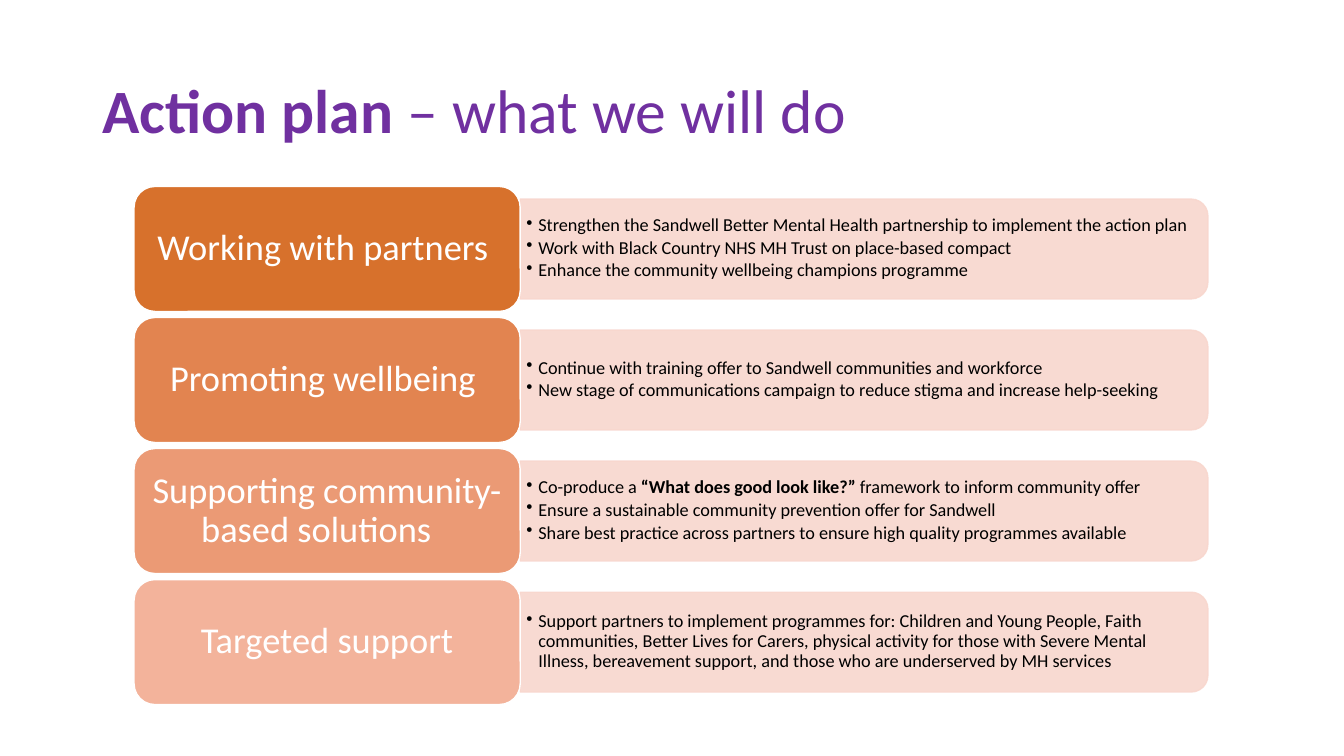
from pptx import Presentation
from pptx import util as u
from pptx.dml.color import RGBColor
from pptx.enum import shapes, text
from lxml import etree

INK = {"title": "7030A0", "strip": "F8D7CE", "edge": "FFFFFF",
       "label": "FFFFFF", "body": "000000"}

# Each run is (text, bold)
TITLE = [("Action plan ", True), ("– what we will do", False)]

# Each row is (label, card colour, bullets)
ROWS = [
    ("Working with partners ", "D7712C", [
        [("Strengthen the Sandwell Better Mental Health partnership to implement the action plan", False)],
        [("Work with Black Country NHS MH Trust on place-based compact", False)],
        [("Enhance the community wellbeing champions programme", False)],
    ]),
    ("Promoting wellbeing ", "E28450", [
        [("Continue with training offer to Sandwell communities and workforce", False)],
        [("New stage of communications campaign to reduce stigma and increase help-seeking", False)],
    ]),
    ("Supporting community-based solutions \t", "EB9A75", [
        [("Co-produce a ", False), ("“What does good look like?” ", True),
         ("framework to inform community offer", False)],
        [("Ensure a sustainable community prevention offer for Sandwell", False)],
        [("Share best practice across partners to ensure high quality programmes available", False)],
    ]),
    ("Targeted support", "F3B39B", [
        [("Support partners to implement programmes for: Children and Young People, Faith "
          "communities, Better Lives for Carers, physical activity for those with Severe Mental "
          "Illness, bereavement support, and those who are underserved by MH services", False)],
    ]),
]

TOP, STEP = 1.85, 1.3
CARD_X, CARD_W, CARD_H = 1.33, 3.83, 1.24
STRIP_W, STRIP_H = 6.82, 0.99
PAD = 0.06
A = "http://schemas.openxmlformats.org/drawingml/2006/main"


def box(slide, x, y, w, h, paras, size, ink, inset, align=None, after=0, bullet=False):
    """Add a middle-anchored text box; paras is a list of lists of runs."""
    frame = slide.shapes.add_textbox(*map(u.Inches, (x, y, w, h))).text_frame
    frame.word_wrap = True
    frame.vertical_anchor = text.MSO_ANCHOR.MIDDLE
    frame.margin_left = frame.margin_right = u.Inches(inset[0])
    frame.margin_top = frame.margin_bottom = u.Inches(inset[1])
    for n, runs in enumerate(paras):
        para = frame.add_paragraph() if n else frame.paragraphs[0]
        para.line_spacing = 0.9
        para.space_after = u.Pt(after)
        para.alignment = align
        if bullet:
            props = para._p.get_or_add_pPr()
            props.set("marL", str(u.Inches(0.12)))
            props.set("indent", str(-u.Inches(0.12)))
            etree.SubElement(props, f"{{{A}}}buChar", char="•")
        for words, bold in runs:
            run = para.add_run()
            run.text = words
            run.font.name, run.font.size, run.font.bold = "Calibri", u.Pt(size), bold
            run.font.color.rgb = RGBColor.from_string(ink)


def block(slide, kind, x, y, w, h, fill, edge):
    shape = slide.shapes.add_shape(kind, *map(u.Inches, (x, y, w, h)))
    shape.shadow.inherit = False
    shape.fill.solid()
    shape.fill.fore_color.rgb = RGBColor.from_string(fill)
    shape.line.color.rgb = RGBColor.from_string(edge)
    shape.line.width = u.Pt(1)
    return shape


def main():
    deck = Presentation()
    deck.slide_width, deck.slide_height = u.Inches(13.33), u.Inches(7.5)
    slide = deck.slides.add_slide(deck.slide_layouts[6])
    box(slide, 0.92, 0.4, 11.5, 1.45, [TITLE], 44, INK["title"], (0.1, 0.05))

    edge = CARD_X + CARD_W
    for n, (label, fill, points) in enumerate(ROWS):
        top = TOP + n * STEP
        mid = top + CARD_H / 2
        # The strip is a tall shape turned on its side about its centre
        strip = block(slide, shapes.MSO_SHAPE.ROUND_2_SAME_RECTANGLE,
                      edge + (STRIP_W - STRIP_H) / 2, mid - STRIP_W / 2,
                      STRIP_H, STRIP_W, INK["strip"], INK["strip"])
        strip.rotation = 90
        for hue in strip._element.spPr.iter(f"{{{A}}}srgbClr"):
            etree.SubElement(hue, f"{{{A}}}alpha", val="90000")
        box(slide, edge + 0.01, mid - 0.45, 6.77, 0.89, points, 13, INK["body"],
            (0.05, 0.03), after=2, bullet=True)
        block(slide, shapes.MSO_SHAPE.ROUNDED_RECTANGLE, CARD_X, top,
              CARD_W, CARD_H, fill, INK["edge"])
        box(slide, CARD_X + PAD, top + PAD, CARD_W - 2 * PAD, CARD_H - 2 * PAD,
            [[(label, False)]], 26, INK["label"], (0.11, 0.05), text.PP_ALIGN.CENTER)

    deck.save("out.pptx")


if __name__ == "__main__":
    main()
